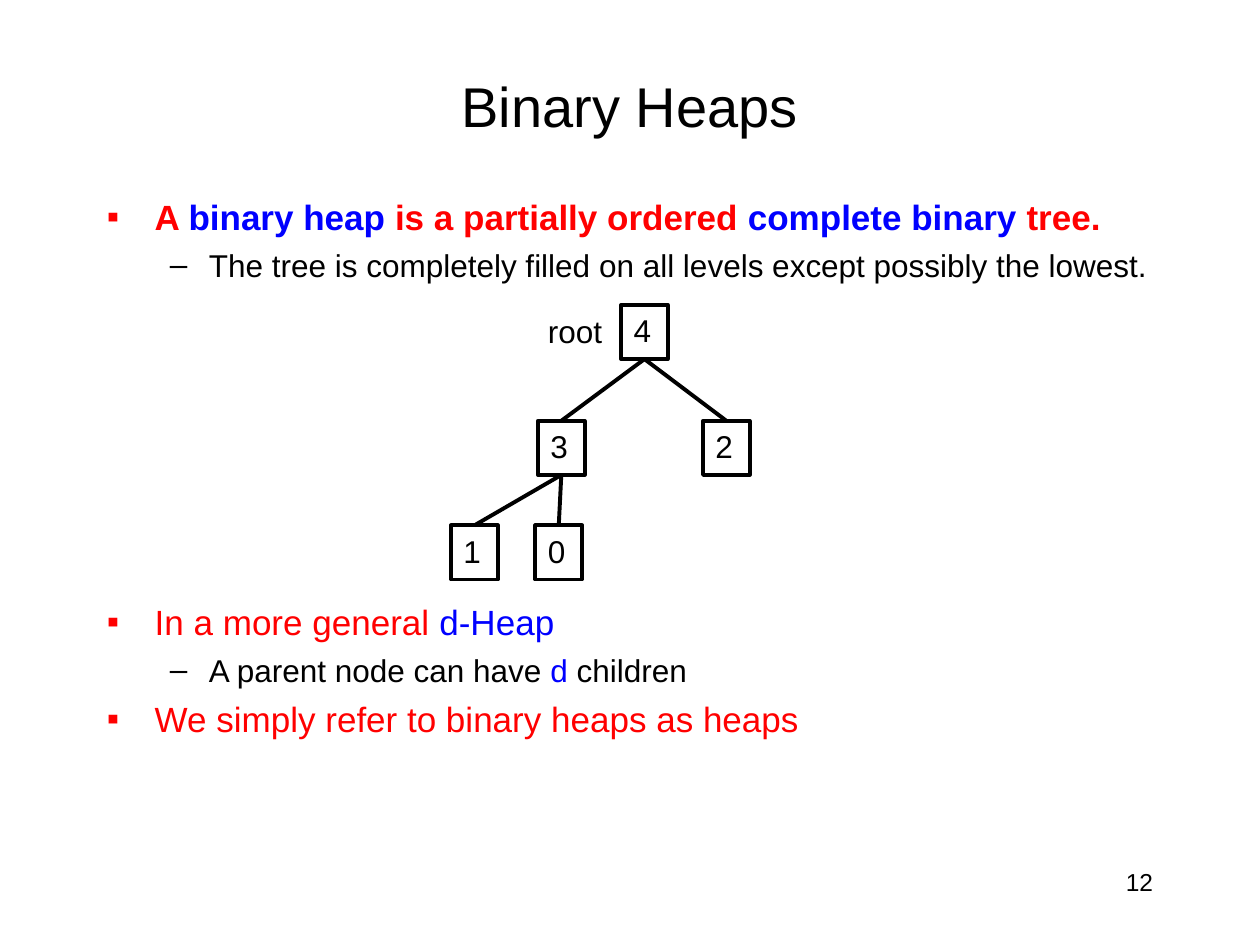
from pptx import Presentation
from pptx.dml.color import RGBColor
from pptx.enum.shapes import MSO_CONNECTOR, MSO_SHAPE
from pptx.enum.text import MSO_ANCHOR, MSO_AUTO_SIZE, PP_ALIGN
from pptx.oxml.ns import qn
from pptx.util import Inches, Pt
from lxml import etree

STRAIGHT = MSO_CONNECTOR.STRAIGHT
RECTANGLE = MSO_SHAPE.RECTANGLE
TOP, MIDDLE = MSO_ANCHOR.TOP, MSO_ANCHOR.MIDDLE
LEFT, CENTER, RIGHT = PP_ALIGN.LEFT, PP_ALIGN.CENTER, PP_ALIGN.RIGHT
GROW = MSO_AUTO_SIZE.SHAPE_TO_FIT_TEXT
BOTTOM_SIDE, TOP_SIDE = 2, 0
BLACK, RED, BLUE = "000000", "FF0000", "0000FF"

LEVELS = [
    {"bullet": "▪", "color": RED, "size": 20, "margin": 0.38, "indent": -0.38},
    {"bullet": "–", "color": BLACK, "size": 18, "margin": 0.81, "indent": -0.31},
]
TREE_GAP = 181
BODY = [
    (0, 5, True, [("A ", RED), ("binary heap", BLUE),
                  (" is a partially ordered ", RED),
                  ("complete binary", BLUE), (" tree.", RED)]),
    (1, 5, False, [("The tree is completely filled on all levels "
                    "except possibly the lowest.", BLACK)]),
    (0, TREE_GAP, False, [("In a more general ", RED), ("d-Heap", BLUE)]),
    (1, 5, False, [("A parent node can have ", BLACK), ("d", BLUE),
                   (" children", BLACK)]),
    (0, 5, False, [("We simply refer to binary heaps as heaps", RED)]),
]
NODES = {"4": (4.93, 2.42), "3": (4.27, 3.34), "2": (5.58, 3.34),
         "1": (3.58, 4.17), "0": (4.25, 4.17)}
EDGES = ["43", "42", "31", "30"]


def color(value):
    return RGBColor.from_string(value)


def apply(target, values):
    for name, value in values.items():
        setattr(target, name, value)


class SlideBuilder:
    font_name = "Arial"
    line_width = Pt(2.25)
    node_size = (0.37, 0.43)

    def __init__(self, slide):
        self.slide = slide

    def run(self, paragraph, text, size, hex_color=BLACK, bold=False):
        run = paragraph.add_run()
        run.text = text
        apply(run.font, {"name": self.font_name, "size": Pt(size), "bold": bold})
        run.font.color.rgb = color(hex_color)

    def text(self, box, text, size, align=LEFT, **frame_format):
        shape = self.slide.shapes.add_textbox(*map(Inches, box))
        apply(shape.text_frame, {"word_wrap": True, **frame_format})
        paragraph = shape.text_frame.paragraphs[0]
        paragraph.alignment = align
        self.run(paragraph, text, size)

    def bullets(self, box, items):
        shape = self.slide.shapes.add_textbox(*map(Inches, box))
        frame = shape.text_frame
        frame.word_wrap = True
        for index, (level, space, bold, pieces) in enumerate(items):
            style = LEVELS[level]
            paragraph = frame.add_paragraph() if index else frame.paragraphs[0]
            apply(paragraph, {"level": level, "space_before": Pt(space)})
            properties = paragraph._p.get_or_add_pPr()
            properties.set("marL", str(Inches(style["margin"])))
            properties.set("indent", str(Inches(style["indent"])))
            bullet_color = etree.SubElement(properties, qn("a:buClr"))
            etree.SubElement(bullet_color, qn("a:srgbClr"), val=style["color"])
            etree.SubElement(properties, qn("a:buFont"), typeface=self.font_name)
            etree.SubElement(properties, qn("a:buChar"), char=style["bullet"])
            for text, hex_color in pieces:
                self.run(paragraph, text, style["size"], hex_color, bold)

    def node(self, position, label):
        shape = self.slide.shapes.add_shape(
            RECTANGLE, *map(Inches, position + self.node_size))
        shape.shadow.inherit = False
        shape.fill.background()
        shape.line.color.rgb = color(BLACK)
        shape.line.width = self.line_width
        apply(shape.text_frame, {"word_wrap": False, "auto_size": GROW,
                                 "vertical_anchor": TOP})
        paragraph = shape.text_frame.paragraphs[0]
        paragraph.alignment = LEFT
        self.run(paragraph, label, 18)
        return shape

    def edge(self, parent, child):
        connector = self.slide.shapes.add_connector(STRAIGHT, 0, 0, 0, 0)
        connector.begin_connect(parent, BOTTOM_SIDE)
        connector.end_connect(child, TOP_SIDE)
        connector.line.color.rgb = color(BLACK)
        connector.line.width = self.line_width
        etree.SubElement(connector._element.spPr, qn("a:effectLst"))


def main():
    presentation = Presentation()
    apply(presentation, {"slide_width": Inches(10), "slide_height": Inches(7.5)})
    slide = presentation.slides.add_slide(presentation.slide_layouts[6])
    builder = SlideBuilder(slide)
    builder.text((7.17, 6.83, 2.08, 0.5), "12", 14, RIGHT)
    builder.text((0.75, 0.42, 8.5, 0.83), "Binary Heaps", 32, CENTER,
                 vertical_anchor=MIDDLE)
    builder.bullets((0.75, 1.5, 8.5, 5.17), BODY)
    nodes = {label: builder.node(position, label)
             for label, position in NODES.items()}
    for parent, child in EDGES:
        builder.edge(nodes[parent], nodes[child])
    builder.text((4.25, 2.43, 0.63, 0.4), "root", 18,
                 word_wrap=False, auto_size=GROW)
    presentation.save("out.pptx")


if __name__ == "__main__":
    main()
